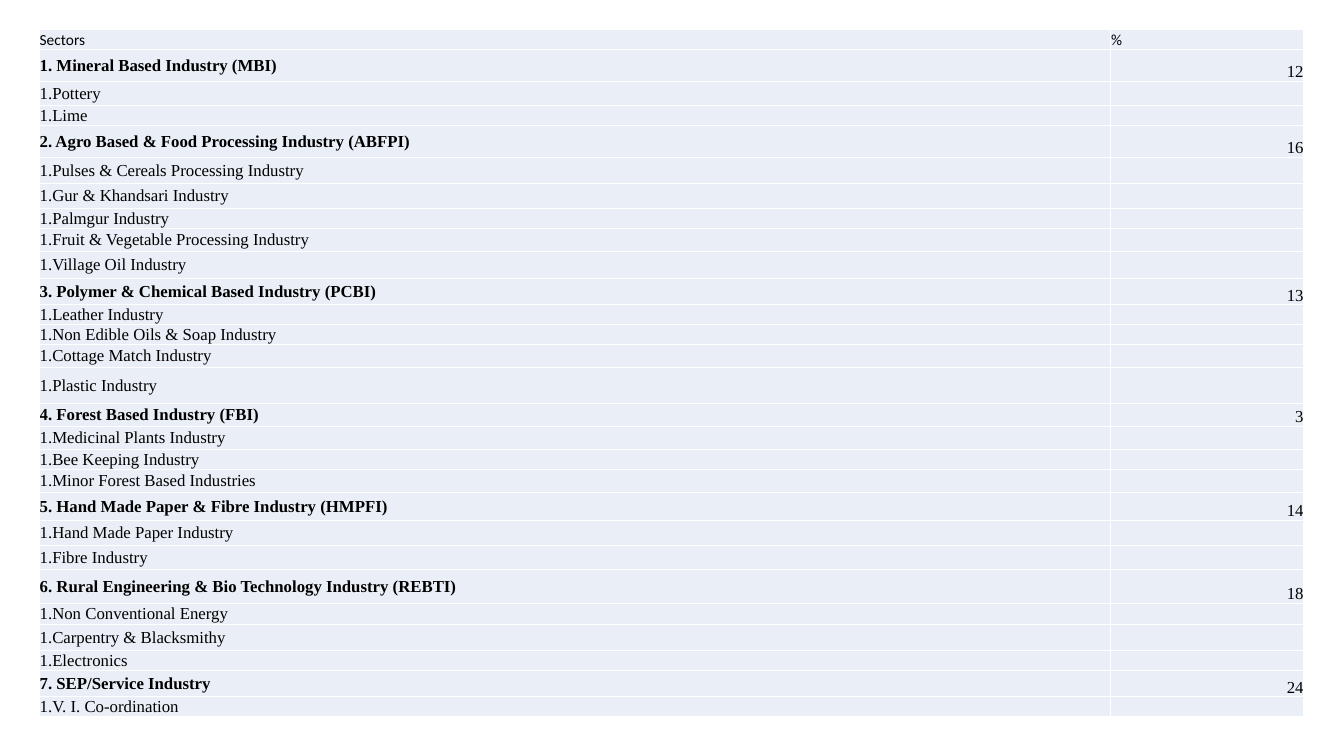
import pptx
import pptx.util
import pptx.dml.color
import pptx.enum.text
import pptx.oxml
import pptx.oxml.ns
from pptx.util import Cm, Pt

# Content: sector, share, row height in cm, then (industry, row height in cm)
HEADER = ("Sectors", "%", 0.46)
SECTORS = [
    ("1. Mineral Based Industry (MBI)", "12", 0.81,
     [("Pottery", 0.61), ("Lime", 0.5)]),
    ("2. Agro Based & Food Processing Industry (ABFPI)", "16", 0.81,
     [("Pulses & Cereals Processing Industry", 0.66),
      ("Gur & Khandsari Industry", 0.62),
      ("Palmgur Industry", 0.5),
      ("Fruit & Vegetable Processing Industry", 0.58),
      ("Village Oil Industry", 0.69)]),
    ("3. Polymer & Chemical Based Industry (PCBI)", "13", 0.66,
     [("Leather Industry", 0.5),
      ("Non Edible Oils & Soap Industry", 0.5),
      ("Cottage Match Industry", 0.58),
      ("Plastic Industry", 0.91)]),
    ("4. Forest Based Industry (FBI)", "3", 0.58,
     [("Medicinal Plants Industry", 0.58),
      ("Bee Keeping Industry", 0.5),
      ("Minor Forest Based Industries", 0.58)]),
    ("5. Hand Made Paper & Fibre Industry (HMPFI)", "14", 0.71,
     [("Hand Made Paper Industry", 0.62), ("Fibre Industry", 0.61)]),
    ("6. Rural Engineering & Bio Technology Industry (REBTI)", "18", 0.85,
     [("Non Conventional Energy", 0.54),
      ("Carpentry & Blacksmithy", 0.66),
      ("Electronics", 0.5)]),
    ("7. SEP/Service Industry", "24", 0.66,
     [("V. I. Co-ordination", 0.5)]),
]
COLOURS = {"fill": "EAEFF7", "border": "FFFFFF", "text": "000000"}
LEFT, TOP = 0.99, 0.75
COLUMN_WIDTHS = (27.0, 4.87)
INSET = 0.01
EMPTY_SIZE = 8
ANCHOR = pptx.enum.text.MSO_ANCHOR
ALIGN = pptx.enum.text.PP_ALIGN
NAMESPACE = pptx.oxml.ns.nsdecls("a")


def colour(name):
    return pptx.dml.color.RGBColor.from_string(COLOURS[name])


def add_borders(cell):
    properties = cell._tc.get_or_add_tcPr()
    for position, side in enumerate(("lnL", "lnR", "lnT", "lnB")):
        properties.insert(position, pptx.oxml.parse_xml(
            f'<a:{side} {NAMESPACE} w="12700"><a:solidFill>'
            f'<a:srgbClr val="{COLOURS["border"]}"/></a:solidFill></a:{side}>'))


def add_number(para):
    properties = para._p.get_or_add_pPr()
    properties.set("marL", "0")
    properties.set("indent", "0")
    properties.append(pptx.oxml.parse_xml(
        f'<a:buClr {NAMESPACE}><a:srgbClr val="{COLOURS["text"]}"/></a:buClr>'))
    properties.append(pptx.oxml.parse_xml(
        f'<a:buAutoNum {NAMESPACE} type="arabicPeriod"/>'))


def fill_cell(cell, text, font="Times New Roman", size=12, bold=False,
              anchor=ANCHOR.MIDDLE, align=ALIGN.LEFT, numbered=False):
    cell.fill.solid()
    cell.fill.fore_color.rgb = colour("fill")
    add_borders(cell)
    cell.margin_left = cell.margin_right = cell.margin_top = Cm(INSET)
    cell.margin_bottom = 0
    cell.vertical_anchor = anchor
    para = cell.text_frame.paragraphs[0]
    if not text:
        # A small end mark keeps an empty cell from stretching its row
        para._p.append(pptx.oxml.parse_xml(
            f'<a:endParaRPr {NAMESPACE} sz="{EMPTY_SIZE * 100}"/>'))
        return
    para.text = text
    para.alignment = align
    if numbered:
        add_number(para)
    span = para.runs[0]
    span.font.name = font
    span.font.size = Pt(size)
    span.font.bold = bold
    span.font.color.rgb = colour("text")


# Table rows: kind, name, share, height
rows = [("header", *HEADER)]
for sector, share, height, industries in SECTORS:
    rows.append(("sector", sector, share, height))
    rows += [("industry", name, "", tall) for name, tall in industries]

deck = pptx.Presentation()
deck.slide_width, deck.slide_height = Cm(33.87), Cm(19.05)
page = deck.slides.add_slide(deck.slide_layouts[6])

# Table frame
table = page.shapes.add_table(
    len(rows), len(COLUMN_WIDTHS), Cm(LEFT), Cm(TOP),
    Cm(sum(COLUMN_WIDTHS)), Cm(sum(row[3] for row in rows))).table
table.horz_banding = False
table.first_row = False
for column, width in zip(table.columns, COLUMN_WIDTHS):
    column.width = Cm(width)

# Cells
for index, (kind, name, share, height) in enumerate(rows):
    table.rows[index].height = Cm(height)
    name_cell, share_cell = table.cell(index, 0), table.cell(index, 1)
    if kind == "header":
        for cell, text in ((name_cell, name), (share_cell, share)):
            fill_cell(cell, text, font="Calibri", size=11, anchor=ANCHOR.BOTTOM)
    else:
        fill_cell(name_cell, name, bold=kind == "sector",
                  numbered=kind == "industry")
        fill_cell(share_cell, share, anchor=ANCHOR.BOTTOM, align=ALIGN.RIGHT)

deck.save("out.pptx")
